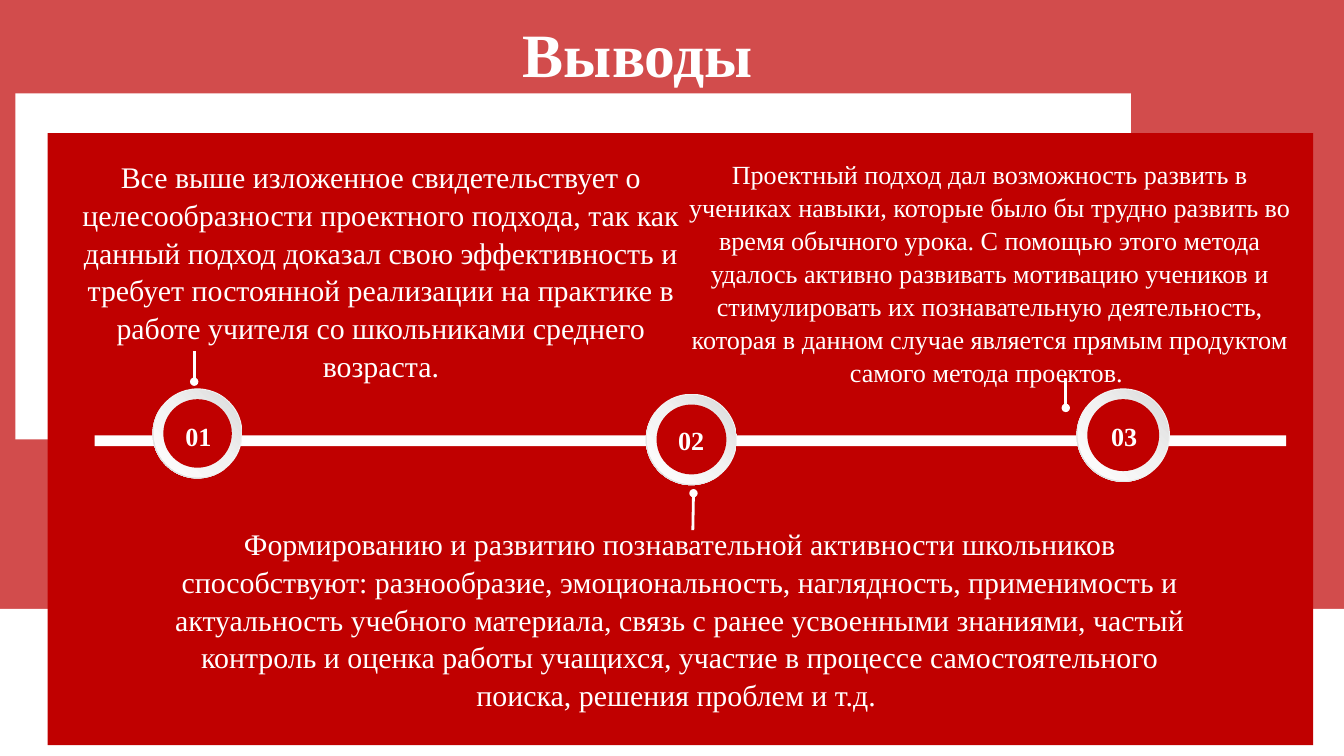
from lxml import etree
from pptx import Presentation
from pptx.dml.color import RGBColor
from pptx.enum.shapes import MSO_CONNECTOR, MSO_SHAPE
from pptx.enum.text import MSO_ANCHOR, PP_ALIGN
from pptx.oxml import parse_xml
from pptx.oxml.ns import nsdecls, qn
from pptx.util import Inches, Pt

RECT, OVAL, DONUT = MSO_SHAPE.RECTANGLE, MSO_SHAPE.OVAL, MSO_SHAPE.DONUT
LINE = MSO_CONNECTOR.STRAIGHT
LEFT, CENTER, TOP = PP_ALIGN.LEFT, PP_ALIGN.CENTER, MSO_ANCHOR.TOP
FONT = "Times New Roman"
COLORS = {"red": "C00000", "white": "FFFFFF", "pale": "F2F2F2", "grey": "D9D9D9"}

TITLE = "Выводы "
TITLE_BOX = (2.5, 0.23, 14.22, 1.11)

# text, box, size
NOTES = [
    ("Все выше изложенное свидетельствует о целесообразности проектного подхода, "
     "так как данный подход доказал свою эффективность и требует постоянной "
     "реализации на практике в работе учителя со школьниками среднего возраста.",
     (1.02, 2.27, 9.3, 3.78), 32),
    ("Формированию и развитию познавательной активности школьников способствуют: "
     "разнообразие, эмоциональность, наглядность, применимость и актуальность "
     "учебного материала, связь с ранее усвоенными знаниями, частый контроль и "
     "оценка работы учащихся, участие в процессе самостоятельного поиска, решения "
     "проблем и т.д. ",
     (2.11, 7.73, 16.02, 3.24), 32),
    ("Проектный подход дал возможность развить в учениках навыки, которые было бы "
     "трудно развить во время обычного урока. С помощью этого метода удалось "
     "активно развивать мотивацию учеников и стимулировать их познавательную "
     "деятельность, которая в данном случае является прямым продуктом самого "
     "метода проектов. ",
     (10, 2.27, 9.45, 3.84), 28),
]

# box, colour, opacity in percent
BANDS = [
    ((0, 0, 20, 9.06), "red", 70),
    ((0, 9.06, 20, 2.19), "white", 100),
]
CARDS = [
    ((0.23, 1.39, 16.6, 5.15), "white", 100),
    ((0.71, 1.98, 18.83, 9.11), "red", 100),
]
AXIS = (1.41, 6.48, 17.73, 0.16)

# label, left, top, diameter, label box, alignment
STEPS = [
    ("01", 2.27, 5.78, 1.34, (2.55, 6.14, 0.87, 0.69), LEFT),
    ("02", 9.61, 5.86, 1.36, (9.88, 6.21, 0.87, 0.69), LEFT),
    ("03", 16.02, 5.78, 1.39, (16.21, 6.15, 1.04, 0.69), CENTER),
]
# dotted end, plain end
PINS = [
    ((10.32, 7.34), (10.31, 7.89)),
    ((2.89, 5.68), (2.89, 5.23)),
    ((15.86, 6.07), (15.86, 5.62)),
]
RIM = (135, [(0, "pale"), (55, "pale"), (100, "grey")])
DISC = (315, [(0, "white"), (51, "pale"), (100, "grey")])


def rgb(name):
    return RGBColor.from_string(COLORS[name])


def add_form(parent, kind, box, color=None, alpha=100, blend=None):
    """Add a borderless shape with a plain fill, or a gradient (angle, stops)."""
    form = parent.shapes.add_shape(kind, *map(Inches, box))
    form.shadow.inherit = False
    form.line.fill.background()
    if blend:
        angle, stops = blend
        marks = "".join(
            f'<a:gs pos="{pos * 1000}"><a:srgbClr val="{COLORS[name]}"/></a:gs>'
            for pos, name in stops)
        form.element.spPr.find(qn("a:prstGeom")).addnext(parse_xml(
            f'<a:gradFill {nsdecls("a")} rotWithShape="1"><a:gsLst>{marks}</a:gsLst>'
            f'<a:lin ang="{angle * 60000}" scaled="0"/></a:gradFill>'))
        return form
    form.fill.solid()
    form.fill.fore_color.rgb = rgb(color)
    if alpha < 100:
        tint = form.element.spPr.find(qn("a:solidFill"))[0]
        etree.SubElement(tint, qn("a:alpha"), val=str(alpha * 1000))
    return form


def put_text(shape, text, size=32, bold=False, align=CENTER, pad=(0.14, 0.07),
             space=1.05):
    frame = shape.text_frame
    frame.word_wrap = True
    frame.vertical_anchor = TOP
    frame.margin_left = frame.margin_right = Inches(pad[0])
    frame.margin_top = frame.margin_bottom = Inches(pad[1])
    para = frame.paragraphs[0]
    para.alignment = align
    para.line_spacing = space
    run = para.add_run()
    run.text = text
    run.font.name, run.font.size, run.font.bold = FONT, Pt(size), bold
    run.font.color.rgb = rgb("white")


def add_text(parent, box, text, **style):
    put_text(parent.shapes.add_textbox(*map(Inches, box)), text, **style)


def add_step(slide, label, left, top, size, box, align):
    group = slide.shapes.add_group_shape()

    def ring(kind, inset, **fill):
        side = size - 2 * inset
        return add_form(group, kind, (left + inset, top + inset, side, side), **fill)

    ring(DONUT, 0, blend=RIM).adjustments[0] = 0.05
    ring(OVAL, 0.02, blend=DISC)
    ring(OVAL, 0.16, color="red")
    add_text(group, box, label, size=28, bold=True, align=align,
             pad=(0.21, 0.11), space=1)


def add_pin(slide, start, end):
    pin = slide.shapes.add_connector(LINE, *map(Inches, start + end))
    pin.line.color.rgb = rgb("white")
    pin.line.width = Pt(3)
    etree.SubElement(pin.line._get_or_add_ln(), qn("a:headEnd"), type="oval")
    etree.SubElement(pin.element.spPr, qn("a:effectLst"))


def main():
    deck = Presentation()
    deck.slide_width, deck.slide_height = Inches(20), Inches(11.25)
    slide = deck.slides.add_slide(deck.slide_layouts[5])

    for box, color, alpha in BANDS:
        add_form(slide, RECT, box, color, alpha)

    title = slide.shapes.title
    title.left, title.top, title.width, title.height = map(Inches, TITLE_BOX)
    put_text(title, TITLE, size=66, bold=True, pad=(0, 0), space=1)
    title.element.getparent().append(title.element)  # in front of the bands

    cards = slide.shapes.add_group_shape()
    for box, color, alpha in CARDS:
        add_form(cards, RECT, box, color, alpha)
    add_form(slide, RECT, AXIS, "white")
    for step in STEPS:
        add_step(slide, *step)
    for text, box, size in NOTES:
        add_text(slide, box, text, size=size)
    for start, end in PINS:
        add_pin(slide, start, end)

    deck.save("out.pptx")


if __name__ == "__main__":
    main()
